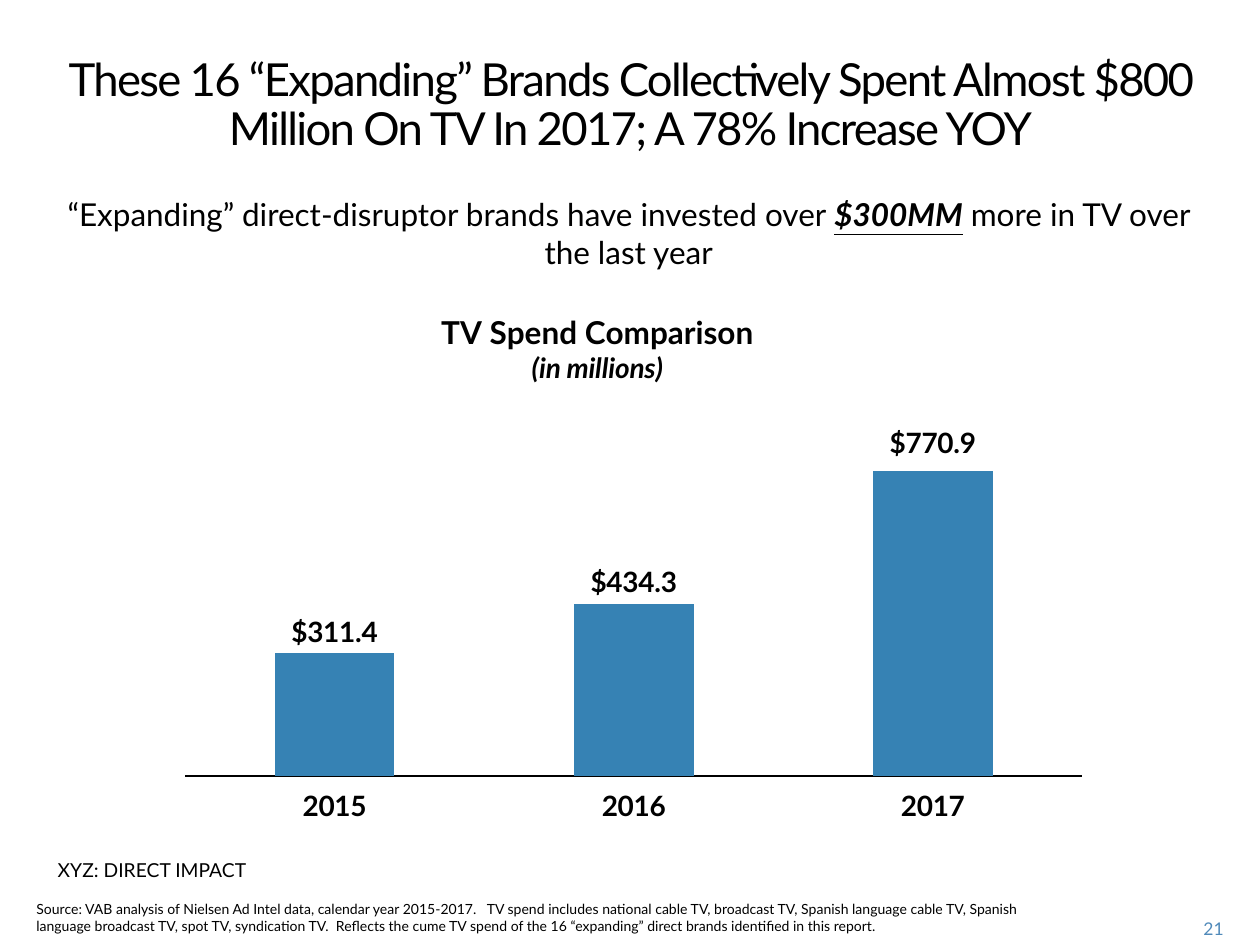
from lxml.etree import SubElement
from pptx import Presentation
from pptx.chart.data import CategoryChartData
from pptx.dml.color import RGBColor
from pptx.enum.chart import XL_CHART_TYPE, XL_TICK_LABEL_POSITION, XL_TICK_MARK
from pptx.enum.text import PP_ALIGN
from pptx.oxml.ns import qn
from pptx.util import Inches, Pt

COLORS = {"text": "000000", "bar": "3682B4", "page": "508ABA"}
FONT = "Lato"
DOLLARS = '"$"#,##0.0'
SPEND = {"2015": 311.4, "2016": 434.3, "2017": 770.9}
LABEL_SHIFTS = [-0.16, -0.21, -0.35]
SOURCE = (
    "Source: VAB analysis of Nielsen Ad Intel data, calendar year 2015-2017.   "
    "TV spend includes national cable TV, broadcast TV, Spanish language cable TV, "
    "Spanish language broadcast TV, spot TV, syndication TV.  Reflects the cume TV "
    "spend of the 16 “expanding” direct brands identified in this report."
)


def style_font(font, size, color="text", bold=False, italic=False, underline=False):
    """Apply the slide's typeface and the given look to a font."""
    font.name = FONT
    font.size = Pt(size)
    font.bold = bold
    font.italic = italic
    font.underline = underline
    font.color.rgb = RGBColor.from_string(COLORS[color])


def add_text(slide, box, pieces, size, color="text", align=PP_ALIGN.LEFT):
    """Add a wrapped one-paragraph text box from (text, emphasised) pieces."""
    frame = slide.shapes.add_textbox(*map(Inches, box)).text_frame
    frame.word_wrap = True
    paragraph = frame.paragraphs[0]
    paragraph.alignment = align
    for text, strong in pieces:
        run = paragraph.add_run()
        run.text = text
        style_font(run.font, size, color, strong, strong, strong)
    return paragraph


def add_headline(slide):
    """Add the tightly set two-line headline."""
    headline = add_text(
        slide, (0.19, 0.4, 9.63, 0.65),
        [("These 16 “Expanding” Brands Collectively Spent Almost $800 "
          "Million On TV In 2017; A 78% Increase YOY", False)],
        26, align=PP_ALIGN.CENTER)
    headline.line_spacing = Pt(28)
    headline.runs[0].font._element.set("spc", "-100")


def set_layout(parent, index, inner=False, **fractions):
    """Place a chart part by fractions of the chart's size."""
    for old in parent.findall(qn("c:layout")):
        parent.remove(old)
    layout = parent.makeelement(qn("c:layout"))
    parent.insert(index, layout)
    manual = SubElement(layout, qn("c:manualLayout"))
    if inner:
        SubElement(manual, qn("c:layoutTarget")).set("val", "inner")
    if parent.tag != qn("c:dLbl"):
        for mode in ("xMode", "yMode"):
            SubElement(manual, qn(f"c:{mode}")).set("val", "edge")
    for key, value in fractions.items():
        SubElement(manual, qn(f"c:{key}")).set("val", str(value))


def add_chart_title(chart):
    """Add the title and its unit line."""
    title = chart.chart_title
    frame = title.text_frame
    frame.text = "TV Spend Comparison\n(in millions)"
    heading, unit = frame.paragraphs
    style_font(heading.runs[0].font, 18, bold=True)
    style_font(unit.runs[0].font, 16, bold=True, italic=True)
    set_layout(title._element, 1, x=0.29, y=0)


def style_axes(chart):
    """Show only the year axis and fix the value scale."""
    years = chart.category_axis
    years.major_tick_mark = XL_TICK_MARK.NONE
    years.tick_label_position = XL_TICK_LABEL_POSITION.LOW
    years.has_major_gridlines = False
    years.format.line.width = Pt(0.75)
    years.format.line.color.rgb = RGBColor.from_string(COLORS["text"])
    years.tick_labels.offset = 0
    style_font(years.tick_labels.font, 16, bold=True)
    dollars = chart.value_axis
    dollars.minimum_scale = 0
    dollars.maximum_scale = 900
    dollars.has_major_gridlines = False
    dollars.visible = False


def label_columns(spend):
    """Put each value above its column, without leader lines."""
    labels = spend.data_labels
    labels.show_value = True
    labels.number_format = DOLLARS
    labels.number_format_is_linked = False
    style_font(labels.font, 16, bold=True)
    for index in range(len(LABEL_SHIFTS)):
        style_font(spend.points[index].data_label.font, 16, bold=True)
    element = labels._element
    for label, shift in zip(element.findall(qn("c:dLbl")), LABEL_SHIFTS):
        set_layout(label, 1, x=0, y=shift)
    for leader in element.findall(qn("c:showLeaderLines")):
        element.remove(leader)
    SubElement(element, qn("c:showLeaderLines")).set("val", "0")


def add_spend_chart(slide):
    """Add the yearly TV spend columns with a value above each."""
    data = CategoryChartData(number_format=DOLLARS)
    data.categories = list(SPEND)
    data.add_series("Series 1", list(SPEND.values()))
    chart = slide.shapes.add_chart(
        XL_CHART_TYPE.COLUMN_STACKED,
        *map(Inches, (1.32, 2.43, 7.42, 4.1)), data).chart
    style_font(chart.font, 10)
    chart.has_legend = False
    add_chart_title(chart)
    style_axes(chart)

    plot = chart.plots[0]
    plot.gap_width = 150
    plot.overlap = 100
    plot.vary_by_categories = False
    spend = plot.series[0]
    spend.format.fill.solid()
    spend.format.fill.fore_color.rgb = RGBColor.from_string(COLORS["bar"])
    label_columns(spend)
    plot_area = chart._chartSpace.find(f".//{qn('c:plotArea')}")
    set_layout(plot_area, 0, inner=True, x=0.02, y=0.22, w=0.96, h=0.69)


def main():
    """Build and save the slide."""
    presentation = Presentation()
    presentation.slide_width = Inches(10)
    presentation.slide_height = Inches(7.5)
    slide = presentation.slides.add_slide(presentation.slide_layouts[6])
    add_headline(slide)
    add_text(
        slide, (0.34, 1.5, 9.3, 0.4),
        [("“Expanding” direct-disruptor brands have invested over ", False),
         ("$300MM", True), (" more in TV over the last year", False)],
        18, align=PP_ALIGN.CENTER)
    add_spend_chart(slide)
    add_text(slide, (0.36, 6.76, 2.85, 0.47), [("XYZ: DIRECT IMPACT", False)], 11)
    add_text(slide, (0.19, 7.1, 8.17, 0.31), [(SOURCE, False)], 8)
    add_text(slide, (9.2, 7.24, 0.61, 0.25), [("21", False)], 10, "page",
             PP_ALIGN.RIGHT)
    presentation.save("out.pptx")


if __name__ == "__main__":
    main()
